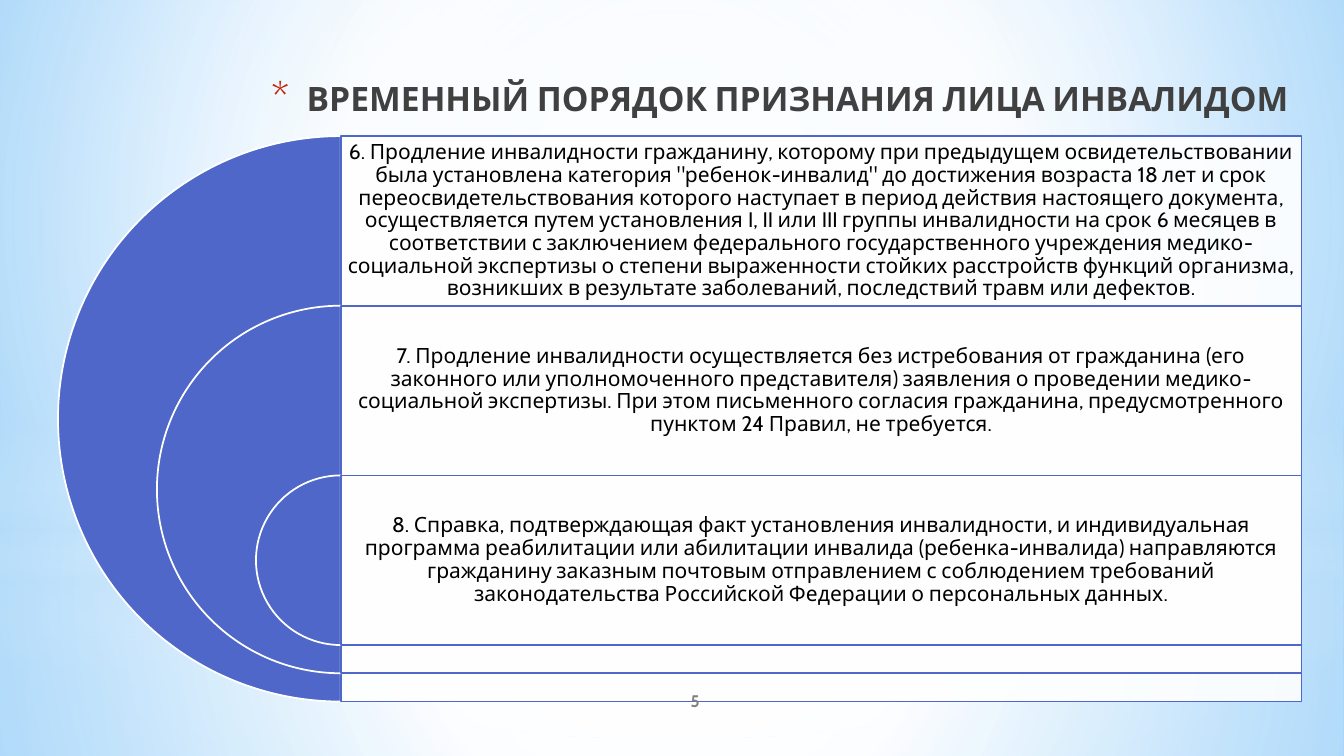
from lxml.etree import SubElement
from pptx import Presentation
from pptx.dml.color import RGBColor as RGB
from pptx.enum.shapes import MSO_SHAPE as SHAPE
from pptx.enum.text import MSO_ANCHOR as ANCHOR, MSO_AUTO_SIZE as AUTO, PP_ALIGN as ALIGN
from pptx.oxml.ns import qn
from pptx.util import Inches, Pt

THEME = {
    "font": "Cabin", "blue": "4E67C8", "white": "FFFFFF", "haze": "B4DCFA",
    "black": "000000", "title": "404040", "number": "808080", "bullet": "C3260C",
    "title_size": 24, "body_size": 15, "number_size": 12, "line": 1.25,
}
WHITE, HAZE = THEME["white"], THEME["haze"]

deck = Presentation()
deck.slide_width, deck.slide_height = Inches(13.33), Inches(7.5)
slide = deck.slides.add_slide(deck.slide_layouts[5])
CELL = deck.slide_height // 750  # 750 grid rows, 1333 grid columns


def grid(*cells):
    return [round(cell * CELL) for cell in cells]


def paint_gradient(owner, stops, focus=None):
    """Fill with (position, colour, opacity) stops, round the focus or top to bottom."""
    gradient = owner.element.find(".//" + qn("a:gradFill"))
    for child in list(gradient):
        gradient.remove(child)
    stop_list = SubElement(gradient, qn("a:gsLst"))
    for position, colour, opacity in stops:
        stop = SubElement(stop_list, qn("a:gs"), pos=str(position * 1000))
        tint = SubElement(stop, qn("a:srgbClr"), val=colour)
        if opacity < 100:
            SubElement(tint, qn("a:alpha"), val=str(opacity * 1000))
    if focus:
        path = SubElement(gradient, qn("a:path"), path="circle")
        sides = {side: str(share * 1000) for side, share in zip("ltrb", focus)}
        SubElement(path, qn("a:fillToRect"), **sides)
    else:
        SubElement(gradient, qn("a:lin"), ang="5400000", scaled="0")


# Background and its haze layers
slide.background.fill.gradient()
paint_gradient(slide, [(0, "9ED5FF", 100), (60, WHITE, 100), (100, "5BB9FF", 100)],
               (20, 10, 20, 60))

CENTRE = (50, 50, 50, 50)
BAND = [(0, WHITE, 0), (29, WHITE, 30), (45, HAZE, 40),
        (55, WHITE, 26), (65, HAZE, 60), (100, WHITE, 0)]
layers = []
for horizon, band_top, dim, glow_end in [(558, 412, 0, 56), (423, 290, 1, 54)]:
    ground = [(0, WHITE, 91 + dim), (37, WHITE, 76 + dim), (100, HAZE, 79 + dim)]
    sky = [(0, WHITE, 89 + dim), (48, WHITE, 62 + dim), (100, HAZE, 79 + dim)]
    glow = [(0, WHITE, 100), (glow_end, WHITE, 0)]
    layers += [
        (SHAPE.RECTANGLE, horizon, 750 - horizon, ground, CENTRE),
        (SHAPE.RECTANGLE, 0, horizon, sky, CENTRE),
        (SHAPE.RECTANGLE, band_top, 250, BAND, None),
        (SHAPE.OVAL, 175, 558, glow, CENTRE),
    ]
for kind, top, height, stops, focus in layers:
    layer = slide.shapes.add_shape(kind, *grid(0, top, 1333, height))
    layer.shadow.inherit = False
    layer.line.fill.background()
    layer.fill.gradient()
    paint_gradient(layer, stops, focus)

# Title, brought in front of the haze
title = slide.shapes.title
title.element.getparent().append(title.element)
title.left, title.top, title.width, title.height = grid(57, 46, 1231, 76)
title.text_frame.text = "ВРЕМЕННЫЙ ПОРЯДОК ПРИЗНАНИЯ ЛИЦА ИНВАЛИДОМ"
properties = title.text_frame.paragraphs[0]._p.get_or_add_pPr()
indent = Inches(0.35)
properties.set("marL", str(indent))
properties.set("indent", str(-indent))
bullet_colour = SubElement(properties, qn("a:buClr"))
SubElement(bullet_colour, qn("a:srgbClr"), val=THEME["bullet"])
SubElement(properties, qn("a:buSzPct"), val="128000")
SubElement(properties, qn("a:buFont"), typeface=THEME["font"])
SubElement(properties, qn("a:buChar"), char="*")

# Nested half discs, each with a panel and its clause
CLAUSES = [
    "6. Продление инвалидности гражданину, которому при предыдущем освидетельствовании "
    "была установлена категория \"ребенок-инвалид\" до достижения возраста 18 лет и срок "
    "переосвидетельствования которого наступает в период действия настоящего документа, "
    "осуществляется путем установления I, II или III группы инвалидности на срок 6 месяцев "
    "в соответствии с заключением федерального государственного учреждения "
    "медико-социальной экспертизы о степени выраженности стойких расстройств функций "
    "организма, возникших в результате заболеваний, последствий травм или дефектов.",
    "7. Продление инвалидности осуществляется без истребования от гражданина (его законного "
    "или уполномоченного представителя) заявления о проведении медико-социальной экспертизы. "
    "При этом письменного согласия гражданина, предусмотренного пунктом 24 Правил, "
    "не требуется.",
    "8. Справка, подтверждающая факт установления инвалидности, и индивидуальная программа "
    "реабилитации или абилитации инвалида (ребенка-инвалида) направляются гражданину "
    "заказным почтовым отправлением с соблюдением требований законодательства Российской "
    "Федерации о персональных данных.",
]
AXIS, TOP, DISC, PANEL = 338, 135, 561, 953
STEP = 0.3 * DISC
diagram = slide.shapes.add_group_shape()
clause_boxes = []
for tier, clause in enumerate(CLAUSES):
    top, size = TOP + tier * STEP, DISC * (1 - 0.35 * tier)
    disc = diagram.shapes.add_shape(SHAPE.PIE, *grid(AXIS - size / 2, top, size, size))
    disc.adjustments[0], disc.adjustments[1] = 54, 162
    panel = diagram.shapes.add_shape(SHAPE.RECTANGLE, *grid(AXIS, top, PANEL, size))
    for shape, fill, line in [(disc, "blue", "white"), (panel, "white", "blue")]:
        shape.shadow.inherit = False
        shape.fill.solid()
        shape.fill.fore_color.rgb = RGB.from_string(THEME[fill])
        shape.line.color.rgb = RGB.from_string(THEME[line])
        shape.line.width = Pt(THEME["line"])
    panel_colour = panel.element.spPr.find(qn("a:solidFill")).find(qn("a:srgbClr"))
    SubElement(panel_colour, qn("a:alpha"), val="90000")
    box = diagram.shapes.add_textbox(*grid(AXIS, top, PANEL, STEP))
    box.text_frame.text = clause
    box.text_frame.paragraphs[0].line_spacing = 0.9
    for side in ("left", "top", "right", "bottom"):
        setattr(box.text_frame, f"margin_{side}", Inches(0.06))
    clause_boxes.append(box)

number = slide.shapes.add_textbox(*grid(556, 675, 267, 40))
number.text_frame.text = "5"

# Text formats
FORMATS = {
    "title": ([title], ANCHOR.BOTTOM, ALIGN.RIGHT, "title", True),
    "body": (clause_boxes, ANCHOR.MIDDLE, ALIGN.CENTER, "black", False),
    "number": ([number], ANCHOR.MIDDLE, ALIGN.CENTER, "number", True),
}
for role, (boxes, anchor, alignment, colour, bold) in FORMATS.items():
    font_format = {"name": THEME["font"], "size": Pt(THEME[f"{role}_size"]), "bold": bold}
    frame_format = {"word_wrap": True, "auto_size": AUTO.NONE, "vertical_anchor": anchor}
    for box in boxes:
        for name, value in frame_format.items():
            setattr(box.text_frame, name, value)
        para = box.text_frame.paragraphs[0]
        para.alignment = alignment
        span = para.runs[0]
        for name, value in font_format.items():
            setattr(span.font, name, value)
        span.font.color.rgb = RGB.from_string(THEME[colour])

deck.save("out.pptx")
